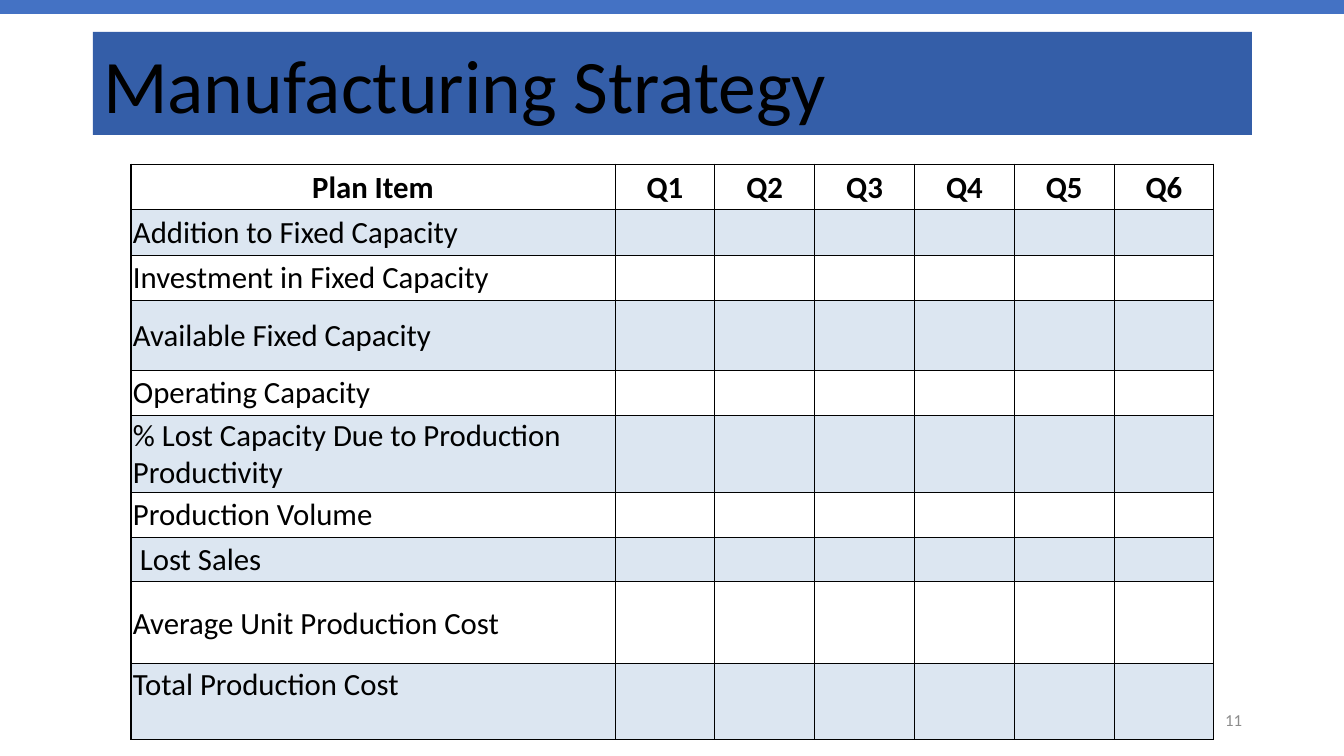
from lxml.etree import SubElement
from pptx import Presentation
from pptx.dml.color import RGBColor
from pptx.enum.shapes import MSO_SHAPE
from pptx.enum.text import MSO_ANCHOR, MSO_AUTO_SIZE, PP_ALIGN
from pptx.oxml.ns import qn
from pptx.util import Emu, Pt

EMU_PER_PX = 914400 / 100.8
COLORS = {"bar": "4472C4", "title": "345EA8", "band": "DCE6F1",
          "text": "000000", "number": "8C8C8C"}
PLAN_ITEMS = [
    ("Addition to Fixed Capacity", 46),
    ("Investment in Fixed Capacity", 45),
    ("Available Fixed Capacity", 70),
    ("Operating Capacity", 45),
    ("% Lost Capacity Due to Production Productivity", 77),
    ("Production Volume", 45),
    (" Lost Sales", 45),
    ("Average Unit Production Cost", 82),
    ("Total Production Cost", 76),
]
QUARTERS = [f"Q{number}" for number in range(1, 7)]
HEADER_HEIGHT = 45
ITEM_WIDTH = 484


def px(length):
    return Emu(round(length * EMU_PER_PX))


def fill_solid(fill, color):
    fill.solid()
    fill.fore_color.rgb = RGBColor.from_string(COLORS[color])


def write_text(text_frame, text, color="text", align=PP_ALIGN.LEFT, spacing=1.0, **font_values):
    text_frame.text = text
    paragraph = text_frame.paragraphs[0]
    paragraph.alignment = align
    paragraph.line_spacing = spacing
    font = paragraph.runs[0].font
    for name, value in {"name": "Calibri", **font_values}.items():
        setattr(font, name, value)
    font.color.rgb = RGBColor.from_string(COLORS[color])


def add_top_bar(slide, box):
    bar = slide.shapes.add_shape(MSO_SHAPE.RECTANGLE, *map(px, box))
    bar.shadow.inherit = False
    fill_solid(bar.fill, "bar")
    bar.line.fill.background()


def place_title(slide, box, text):
    title = slide.shapes.title
    title.left, title.top, title.width, title.height = map(px, box)
    fill_solid(title.fill, "title")
    write_text(title.text_frame, text, spacing=0.9, size=Pt(54))
    title.text_frame.auto_size = MSO_AUTO_SIZE.NONE
    title.text_frame.vertical_anchor = MSO_ANCHOR.BOTTOM


def add_slide_number(slide, box, text):
    text_frame = slide.shapes.add_textbox(*map(px, box)).text_frame
    text_frame.word_wrap = True
    text_frame.vertical_anchor = MSO_ANCHOR.MIDDLE
    write_text(text_frame, text, "number", PP_ALIGN.RIGHT, 0.9, size=Pt(12))


def set_borders(cell, widths):
    """Draw the cell's edges; widths maps L, R, T and B to points."""
    properties = cell._tc.get_or_add_tcPr()
    for position, (side, width) in enumerate(widths.items()):
        line = SubElement(properties, qn(f"a:ln{side}"), w=str(Pt(width)))
        properties.insert(position, line)
        solid = SubElement(line, qn("a:solidFill"))
        SubElement(solid, qn("a:srgbClr"), val=COLORS["text"])


def format_cell(cell, banded, first, last):
    if banded:
        fill_solid(cell.fill, "band")
    else:
        cell.fill.background()
    set_borders(cell, {"L": 1 if first else 0.5, "R": 1 if last else 0.5, "T": 0.5, "B": 0.5})
    margins = {"margin_left": 2, "margin_top": 2, "margin_right": 2, "margin_bottom": 0}
    for name, value in margins.items():
        setattr(cell, name, px(value))
    cell.vertical_anchor = MSO_ANCHOR.MIDDLE


def add_plan_table(slide, box):
    heights = [HEADER_HEIGHT] + [height for _, height in PLAN_ITEMS]
    column_count = len(QUARTERS) + 1
    table = slide.shapes.add_table(len(heights), column_count, *map(px, box)).table
    table.first_row = table.horz_banding = False

    quarter_width = (box[2] - ITEM_WIDTH) / len(QUARTERS)
    for index, column in enumerate(table.columns):
        column.width = px(quarter_width if index else ITEM_WIDTH)
    for row_index, row in enumerate(table.rows):
        row.height = px(heights[row_index])
        for column_index, cell in enumerate(row.cells):
            format_cell(cell, row_index % 2 == 1, column_index == 0,
                        column_index == column_count - 1)

    for index, heading in enumerate(["Plan Item"] + QUARTERS):
        write_text(table.cell(0, index).text_frame, heading,
                   align=PP_ALIGN.CENTER, size=Pt(22), bold=True)
    for index, (item, _) in enumerate(PLAN_ITEMS, start=1):
        write_text(table.cell(index, 0).text_frame, item, size=Pt(22), bold=False)
    table.cell(len(PLAN_ITEMS), 0).vertical_anchor = MSO_ANCHOR.TOP


def build_strategy_slide(presentation):
    slide = presentation.slides.add_slide(presentation.slide_layouts.get_by_name("Title Only"))
    place_title(slide, (93, 32, 1159, 103), "Manufacturing Strategy")
    add_top_bar(slide, (0, 0, 1344, 14))
    add_slide_number(slide, (950, 701, 302, 40), "11")
    add_plan_table(slide, (131, 164, 1083, 576))


def main():
    presentation = Presentation()
    presentation.slide_width, presentation.slide_height = px(1344), px(756)
    build_strategy_slide(presentation)
    presentation.save("out.pptx")


if __name__ == "__main__":
    main()
